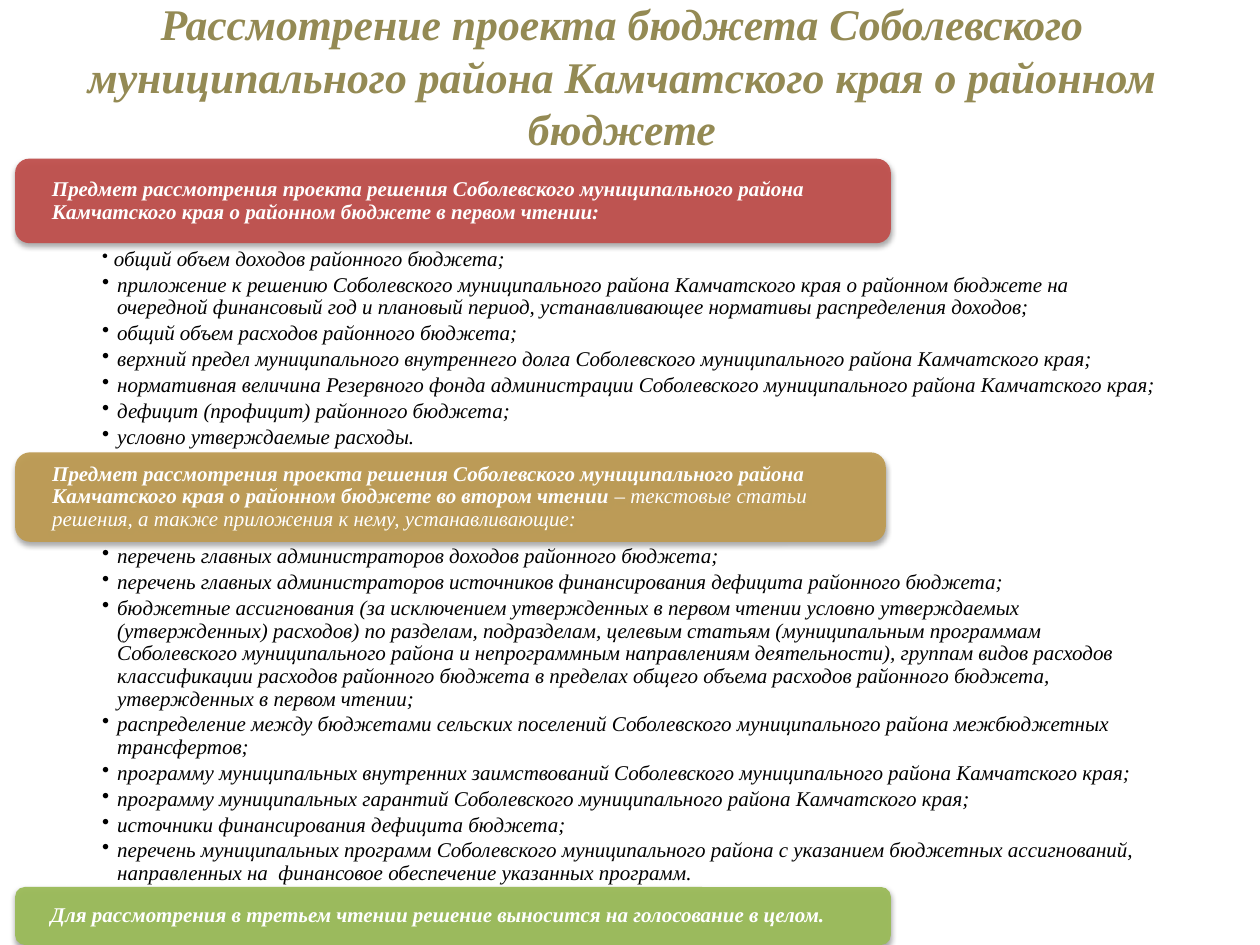
from dataclasses import dataclass
from typing import NamedTuple

from lxml import etree
from pptx import Presentation
from pptx.dml.color import RGBColor
from pptx.enum.shapes import MSO_SHAPE
from pptx.enum.text import MSO_ANCHOR, PP_ALIGN
from pptx.oxml.ns import qn
from pptx.util import Inches, Pt

ROUNDED = MSO_SHAPE.ROUNDED_RECTANGLE
RECTANGLE = MSO_SHAPE.RECTANGLE
MIDDLE, TOP = MSO_ANCHOR.MIDDLE, MSO_ANCHOR.TOP
LEFT, CENTER = PP_ALIGN.LEFT, PP_ALIGN.CENTER


@dataclass(frozen=True)
class Theme:
    font: str = "Times New Roman"
    title: str = "948A54"
    body: str = "000000"
    light: str = "FFFFFF"
    first: str = "C0504D"
    second: str = "BD9B53"
    third: str = "9BBB59"
    title_size: float = 25
    body_size: float = 12
    small_size: float = 10
    line_spacing: float = 0.9
    item_gap: float = 1.8


THEME = Theme()


class Box(NamedTuple):
    left: float
    top: float
    width: float
    height: float


@dataclass(frozen=True)
class Heading:
    box: Box
    color: str
    bold_text: str
    plain_text: str = ""


@dataclass(frozen=True)
class Panel:
    box: Box
    items: tuple[str, ...]
    small_first_bullet: bool = False


TITLE = ("Рассмотрение проекта бюджета Соболевского муниципального района "
         "Камчатского края о районном бюджете")
SUBJECT = ("Предмет рассмотрения проекта решения Соболевского муниципального района "
           "Камчатского края о районном бюджете ")

PANELS = (
    Panel(Box(0.04, 1.7, 9.92, 1.95), (
        "общий объем доходов районного бюджета;",
        "приложение к решению Соболевского муниципального района Камчатского края о районном "
        "бюджете на очередной финансовый год и плановый период, устанавливающее нормативы "
        "распределения доходов;",
        "общий объем расходов районного бюджета;",
        "верхний предел муниципального внутреннего долга Соболевского муниципального района "
        "Камчатского края;",
        "нормативная величина Резервного фонда администрации Соболевского муниципального "
        "района Камчатского края;",
        "дефицит (профицит) районного бюджета;",
        "условно утверждаемые расходы.",
    ), small_first_bullet=True),
    Panel(Box(0.04, 4.06, 9.92, 2.99), (
        "перечень главных администраторов доходов районного бюджета;",
        "перечень главных администраторов источников финансирования дефицита районного бюджета;",
        "бюджетные ассигнования (за исключением утвержденных в первом чтении условно "
        "утверждаемых (утвержденных) расходов) по разделам, подразделам, целевым статьям "
        "(муниципальным программам Соболевского муниципального района и непрограммным "
        "направлениям деятельности), группам видов расходов классификации расходов районного "
        "бюджета в пределах общего объема расходов районного бюджета, утвержденных в первом "
        "чтении;",
        "распределение между бюджетами сельских поселений Соболевского муниципального района "
        "межбюджетных трансфертов;",
        "программу муниципальных внутренних заимствований Соболевского муниципального района "
        "Камчатского края;",
        "программу муниципальных гарантий Соболевского муниципального района Камчатского края;",
        "источники финансирования дефицита бюджета;",
        "перечень муниципальных программ Соболевского муниципального района с указанием "
        "бюджетных ассигнований, направленных на  финансовое обеспечение указанных программ.",
    )),
)

HEADINGS = (
    Heading(Box(0.12, 1.26, 6.95, 0.67), THEME.first, SUBJECT + "в первом чтении:"),
    Heading(Box(0.12, 3.59, 6.91, 0.71), THEME.second, SUBJECT + "во втором чтении",
            " – текстовые статьи решения, а также приложения к нему, устанавливающие:"),
    Heading(Box(0.12, 7.04, 6.95, 0.46), THEME.third,
            "Для рассмотрения в третьем чтении решение выносится на голосование в целом."),
)


def add_box(slide, kind, box: Box, color: str, opacity: int):
    shape = slide.shapes.add_shape(kind, *map(Inches, box))
    shape.shadow.inherit = False
    shape.line.fill.background()
    shape.fill.solid()
    shape.fill.fore_color.rgb = RGBColor.from_string(color)
    color_element = shape.fill._xPr.find(qn("a:solidFill"))[0]
    etree.SubElement(color_element, qn("a:alpha"), val=str(opacity * 1000))
    return shape


def add_shadow(shape) -> None:
    effects = shape._element.spPr.find(qn("a:effectLst"))
    shadow = etree.SubElement(effects, qn("a:outerShdw"), blurRad=str(Pt(3.1)),
                              dist=str(Pt(1.8)), dir="5400000", rotWithShape="0")
    color = etree.SubElement(shadow, qn("a:srgbClr"), val="000000")
    etree.SubElement(color, qn("a:alpha"), val="35000")


def set_frame(shape, anchor, side: float, top: float, bottom: float):
    frame = shape.text_frame
    frame.word_wrap = True
    frame.vertical_anchor = anchor
    frame.margin_left = frame.margin_right = Inches(side)
    frame.margin_top, frame.margin_bottom = Inches(top), Inches(bottom)
    return frame


def style_paragraph(paragraph, size: float, color: str, alignment=LEFT) -> None:
    paragraph.alignment = alignment
    font = paragraph.font
    font.name, font.size, font.italic = THEME.font, Pt(size), True
    font.color.rgb = RGBColor.from_string(color)


def set_indent(paragraph, margin: float, first_line: float) -> None:
    properties = paragraph._p.get_or_add_pPr()
    properties.set("marL", str(Inches(margin)))
    properties.set("indent", str(Inches(first_line)))


def add_bullet(paragraph, hang: float) -> None:
    set_indent(paragraph, hang, -hang)
    properties = paragraph._p.get_or_add_pPr()
    bullet = etree.Element(qn("a:buChar"), char="•")
    properties.find(qn("a:defRPr")).addprevious(bullet)


def draw_panel(slide, panel: Panel) -> None:
    shape = add_box(slide, RECTANGLE, panel.box, THEME.light, 50)
    frame = set_frame(shape, TOP, 0.77, 0.27, 0.08)
    for index, item in enumerate(panel.items):
        paragraph = frame.paragraphs[0] if index == 0 else frame.add_paragraph()
        small_bullet = index == 0 and panel.small_first_bullet
        style_paragraph(paragraph, THEME.body_size, THEME.body)
        paragraph.level = 1
        paragraph.line_spacing = THEME.line_spacing
        paragraph.space_after = Pt(THEME.item_gap)
        add_bullet(paragraph, 0.06 if small_bullet else 0.12)
        if small_bullet:
            lead = paragraph.add_run()
            lead.text = " "
            lead.font.size, lead.font.italic = Pt(THEME.small_size), False
        paragraph.add_run().text = item


def draw_heading(slide, heading: Heading) -> None:
    shape = add_box(slide, ROUNDED, heading.box, heading.color, 95)
    add_shadow(shape)
    paragraph = set_frame(shape, MIDDLE, 0.26, 0, 0).paragraphs[0]
    style_paragraph(paragraph, THEME.body_size, THEME.light)
    paragraph.line_spacing = THEME.line_spacing
    for text, bold in ((heading.bold_text, True), (heading.plain_text, False)):
        if text:
            run = paragraph.add_run()
            run.text, run.font.bold = text, bold


def draw_title(slide) -> None:
    shape = slide.shapes.add_textbox(*map(Inches, Box(-0.91, 0.29, 10.91, 0.62)))
    paragraph = set_frame(shape, MIDDLE, 0.1, 0.05, 0.05).paragraphs[0]
    style_paragraph(paragraph, THEME.title_size, THEME.title, CENTER)
    set_indent(paragraph, 0.78, 0)
    paragraph.font.bold = True
    paragraph.add_run().text = TITLE


def main() -> None:
    presentation = Presentation()
    presentation.slide_width, presentation.slide_height = Inches(10), Inches(7.5)
    slide = presentation.slides.add_slide(presentation.slide_layouts[6])
    # Bullet panels lie behind the headings that overlap them
    for panel in PANELS:
        draw_panel(slide, panel)
    for heading in HEADINGS:
        draw_heading(slide, heading)
    draw_title(slide)
    presentation.save("out.pptx")


if __name__ == "__main__":
    main()
